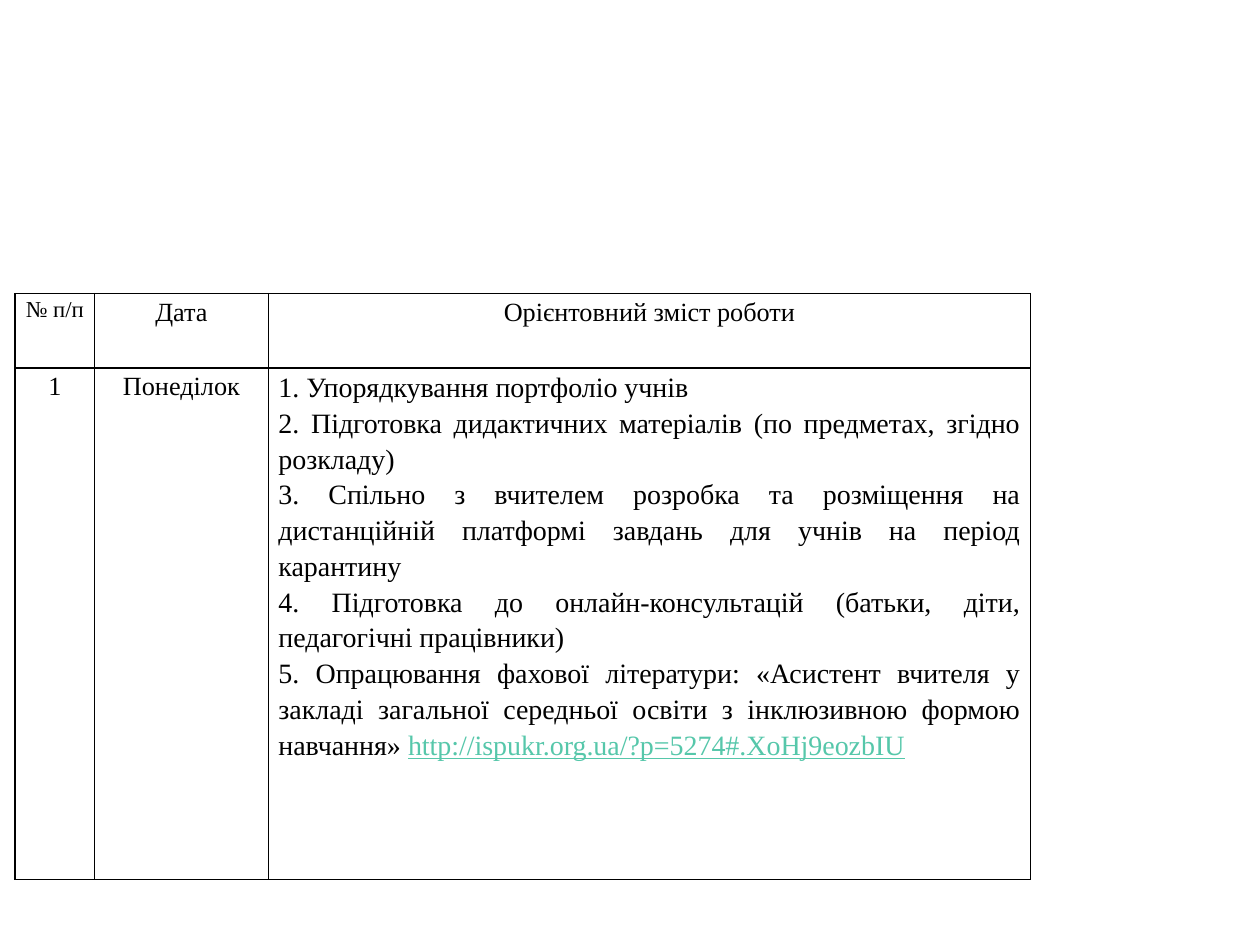
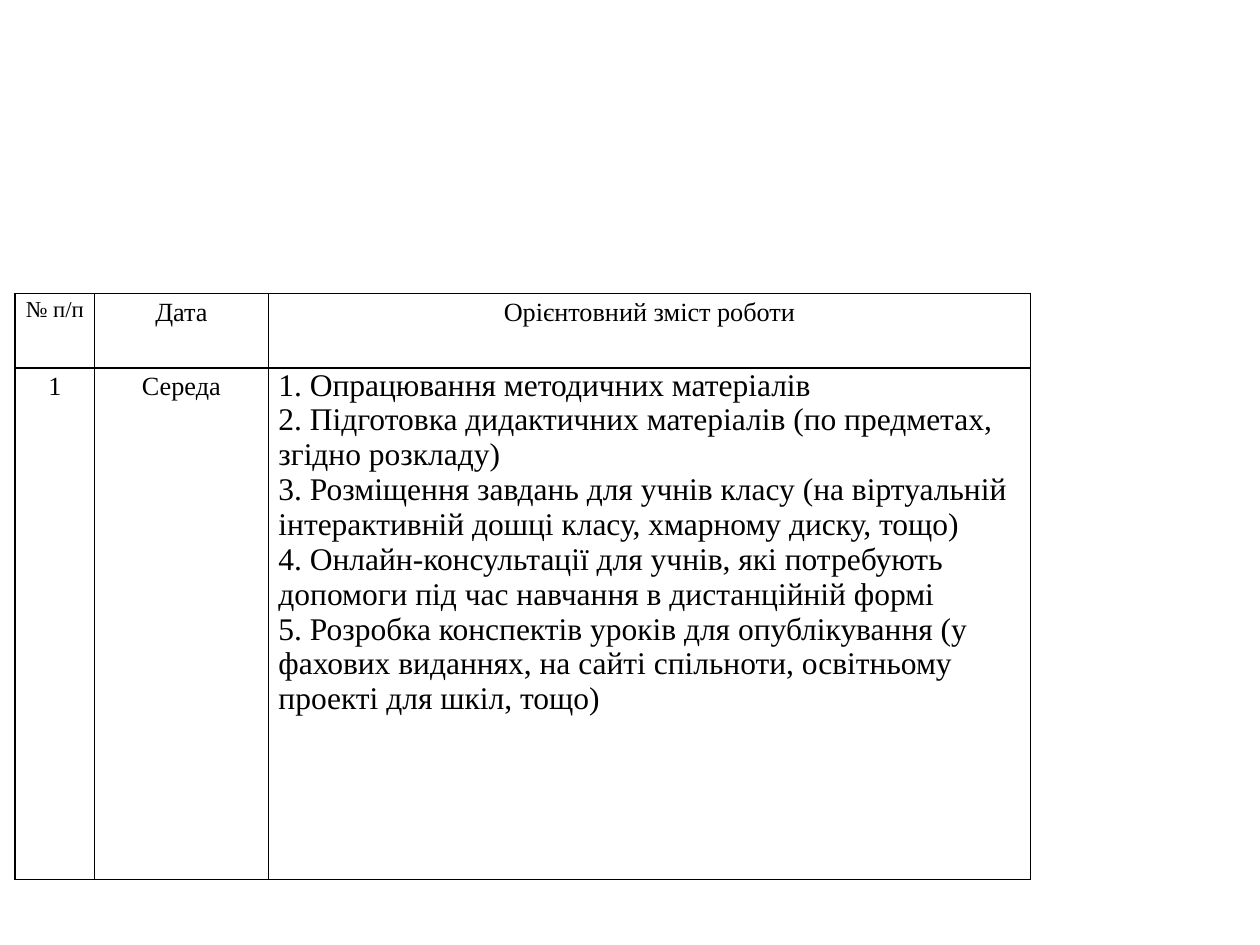
from dataclasses import dataclass

from lxml import etree
from pptx import Presentation
from pptx.dml.color import RGBColor
from pptx.enum import text
from pptx.oxml import ns
from pptx.util import Inches, Pt


@dataclass(frozen=True)
class Theme:
    font: str = "Times New Roman"
    ink: str = "000000"
    paper: str = "FFFFFF"
    link: str = "56C7AA"
    number_size: int = 13
    label_size: int = 15
    border_width: float = 1
    line_spacing: float = 1.15


CENTER = text.PP_ALIGN.CENTER
JUSTIFY = text.PP_ALIGN.JUSTIFY
COLUMN_WIDTHS = (0.63, 1.38, 6.05)
ROW_HEIGHTS = (0.59, 4.06)
HEADINGS = ("№ п/п", "Дата", "Орієнтовний зміст роботи")


class PlanDeck:
    def __init__(self, theme):
        self.theme = theme
        self.deck = Presentation()
        self.deck.slide_width, self.deck.slide_height = Inches(10), Inches(7.5)
        self.slide = None

    def add_slide(self):
        self.slide = self.deck.slides.add_slide(self.deck.slide_layouts[6])
        background = self.slide.background.fill
        background.solid()
        background.fore_color.rgb = RGBColor.from_string(self.theme.paper)

    def border(self, cell):
        properties = cell._tc.get_or_add_tcPr()
        for side in ("lnL", "lnR", "lnT", "lnB"):
            line = etree.SubElement(properties, ns.qn(f"a:{side}"),
                                    w=str(Pt(self.theme.border_width)))
            fill = etree.SubElement(line, ns.qn("a:solidFill"))
            etree.SubElement(fill, ns.qn("a:srgbClr"), val=self.theme.ink)

    def fill_cell(self, cell, lines, size, align=CENTER, spacing=None, link=None):
        self.border(cell)
        cell.fill.solid()
        cell.fill.fore_color.rgb = RGBColor.from_string(self.theme.paper)
        cell.margin_left = cell.margin_right = Inches(0.08)
        cell.margin_top = cell.margin_bottom = 0

        frame = cell.text_frame
        for index, line in enumerate(lines):
            paragraph = frame.add_paragraph() if index else frame.paragraphs[0]
            paragraph.alignment = align
            paragraph.line_spacing = spacing
            paragraph.font.name = self.theme.font
            paragraph.font.size = Pt(size)
            paragraph.font.color.rgb = RGBColor.from_string(self.theme.ink)
            paragraph.add_run().text = line

        # A web address closes the last item
        if link:
            address = paragraph.add_run()
            address.text = link
            address.font.underline = True
            address.font.color.rgb = RGBColor.from_string(self.theme.link)

    def plan_table(self, day, tasks, **task_style):
        plan = self.slide.shapes.add_table(
            len(ROW_HEIGHTS), len(COLUMN_WIDTHS), Inches(0.12), Inches(2.33),
            Inches(sum(COLUMN_WIDTHS)), Inches(sum(ROW_HEIGHTS))).table
        plan.first_row = plan.horz_banding = False
        for column, width in zip(plan.columns, COLUMN_WIDTHS):
            column.width = Inches(width)
        for row, height in zip(plan.rows, ROW_HEIGHTS):
            row.height = Inches(height)

        # Headings, then the number and the day
        theme = self.theme
        for column, heading in enumerate(HEADINGS):
            size = theme.label_size if column else theme.number_size
            self.fill_cell(plan.cell(0, column), [heading], size,
                           spacing=theme.line_spacing)
        for column, label in enumerate(("1", day)):
            self.fill_cell(plan.cell(1, column), [label], theme.label_size,
                           spacing=theme.line_spacing)

        # Numbered tasks of the day
        numbered = [f"{number}. {task}" for number, task in enumerate(tasks, 1)]
        self.fill_cell(plan.cell(1, 2), numbered, **task_style)


MONDAY_TASKS = (
    "Упорядкування портфоліо учнів",
    "Підготовка дидактичних матеріалів (по предметах, згідно розкладу)",
    "Спільно з вчителем розробка та розміщення на дистанційній платформі "
    "завдань для учнів на період карантину",
    "Підготовка до онлайн-консультацій (батьки, діти, педагогічні працівники)",
    "Опрацювання фахової літератури: «Асистент вчителя у закладі загальної "
    "середньої освіти з інклюзивною формою навчання» ",
)
WEDNESDAY_TASKS = (
    "Опрацювання методичних матеріалів",
    "Підготовка дидактичних матеріалів (по предметах, згідно розкладу)",
    "Розміщення завдань для учнів класу (на віртуальній інтерактивній дошці "
    "класу, хмарному диску, тощо)",
    "Онлайн-консультації для учнів, які потребують допомоги під час навчання "
    "в дистанційній формі",
    "Розробка конспектів уроків для опублікування (у фахових виданнях, на "
    "сайті спільноти, освітньому проекті для шкіл, тощо)",
)


def main():
    plan = PlanDeck(Theme())

    # Monday
    plan.add_slide()
    plan.plan_table("Понеділок", MONDAY_TASKS, size=16, align=JUSTIFY,
                    spacing=plan.theme.line_spacing,
                    link="http://ispukr.org.ua/?p=5274#.XoHj9eozbIU")

    # Wednesday
    plan.add_slide()
    plan.plan_table("Середа", WEDNESDAY_TASKS, size=18, align=text.PP_ALIGN.LEFT)

    plan.deck.save("out.pptx")


if __name__ == "__main__":
    main()
